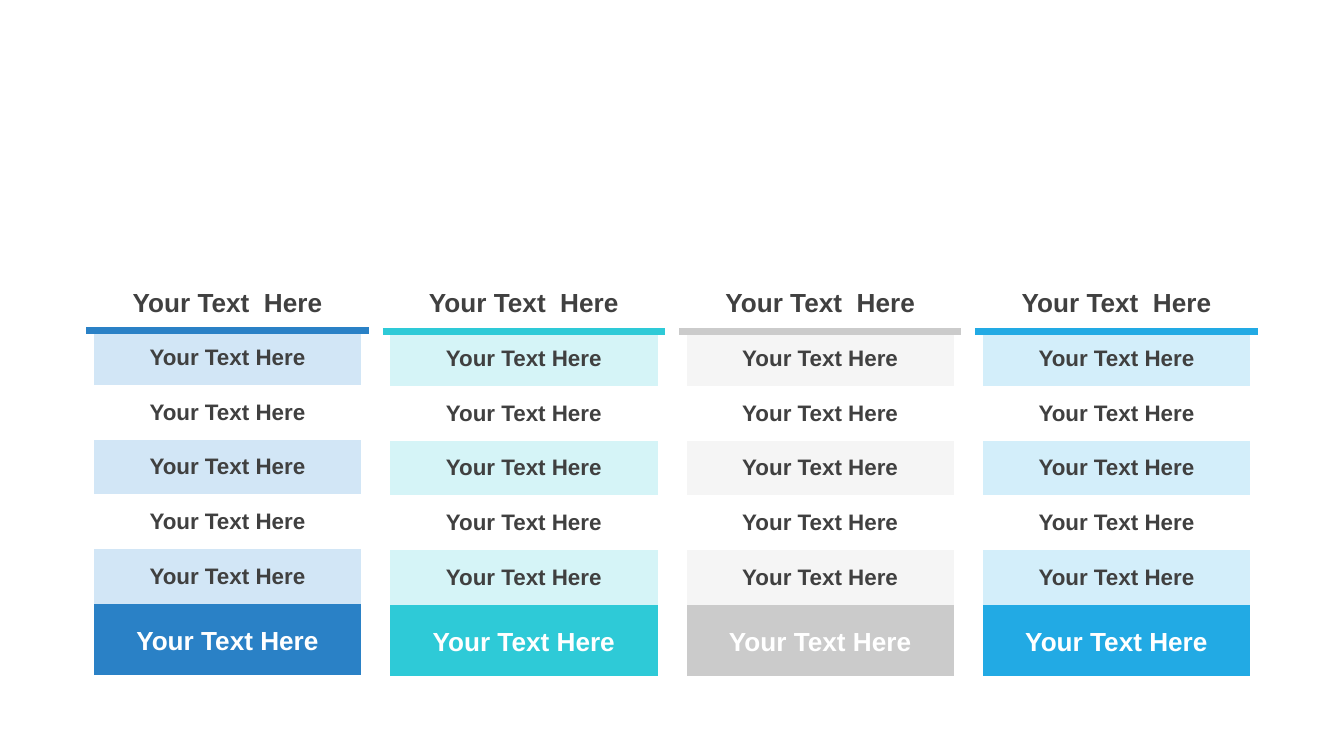
from pptx import Presentation
from pptx.dml.color import RGBColor
from pptx.enum.text import MSO_ANCHOR, PP_ALIGN
from pptx.oxml import parse_xml
from pptx.oxml.ns import nsdecls
from pptx.util import Pt

COLORS = {
    "white": "FFFFFF", "ink": "404040",
    "blue": "2A81C6", "blue_tint": "D2E6F6",
    "teal": "2ECAD7", "teal_tint": "D5F4F7",
    "grey": "CBCBCB", "grey_tint": "F5F5F5",
    "sky": "22AAE4", "sky_tint": "D3EEFA",
}
HEADING, ITEM = "Your Text  Here", "Your Text Here"
ITEM_COUNT = 5
ITEM_HEIGHT, FOOTER_HEIGHT = 29.3, 40
BORDER_WIDTH = Pt(4.5)

# Accent and header height of each list, from left to right
LISTS = [("blue", 29.4), ("teal", 30), ("grey", 30), ("sky", 30)]
LEFT, TOP, WIDTH, PITCH = 48.3, 147.6, 147.2, 158.75


def write_text(cell, text, *, size=12, color="ink"):
    cell.vertical_anchor = MSO_ANCHOR.MIDDLE
    paragraph = cell.text_frame.paragraphs[0]
    paragraph.alignment = PP_ALIGN.CENTER
    run = paragraph.add_run()
    run.text = text
    run.font.name = "Arial"
    run.font.size = Pt(size)
    run.font.bold = True
    run.font.color.rgb = RGBColor.from_string(COLORS[color])


def paint_cell(cell, fill, *, top=None, bottom=None):
    cell.fill.solid()
    cell.fill.fore_color.rgb = RGBColor.from_string(COLORS[fill])
    # Borders come before the fill in the cell properties
    properties = cell._tc.get_or_add_tcPr()
    sides = [("L", "white"), ("R", "white"), ("T", top), ("B", bottom)]
    for position, (side, color) in enumerate(sides):
        if color:
            paint = f'<a:solidFill><a:srgbClr val="{COLORS[color]}"/></a:solidFill>'
        else:
            paint = "<a:noFill/>"
        border = parse_xml(
            f'<a:ln{side} {nsdecls("a")} w="{BORDER_WIDTH}">{paint}</a:ln{side}>')
        properties.insert(position, border)


def add_list(slide, left, top, width, header_height, accent):
    heights = [header_height] + [ITEM_HEIGHT] * ITEM_COUNT + [FOOTER_HEIGHT]
    table = slide.shapes.add_table(
        len(heights), 1, Pt(left), Pt(top), Pt(width), Pt(sum(heights))).table
    table.first_row = table.horz_banding = False
    for row, height in zip(table.rows, heights):
        row.height = Pt(height)

    # Heading above the accent rule
    header = table.cell(0, 0)
    write_text(header, HEADING, size=14)
    paint_cell(header, "white", top="white", bottom=accent)

    # Items, every other one tinted
    for number in range(1, ITEM_COUNT + 1):
        item = table.cell(number, 0)
        write_text(item, ITEM)
        paint_cell(item, f"{accent}_tint" if number % 2 else "white",
                   top=accent if number == 1 else None)

    # Footer in the accent colour
    footer = table.cell(ITEM_COUNT + 1, 0)
    write_text(footer, ITEM, size=14, color="white")
    paint_cell(footer, accent, bottom="white")


def main():
    presentation = Presentation()
    presentation.slide_width, presentation.slide_height = Pt(720), Pt(405)
    slide = presentation.slides.add_slide(presentation.slide_layouts[6])
    for column, (accent, header_height) in enumerate(LISTS):
        add_list(slide, LEFT + column * PITCH, TOP, WIDTH, header_height, accent)
    presentation.save("out.pptx")


if __name__ == "__main__":
    main()
